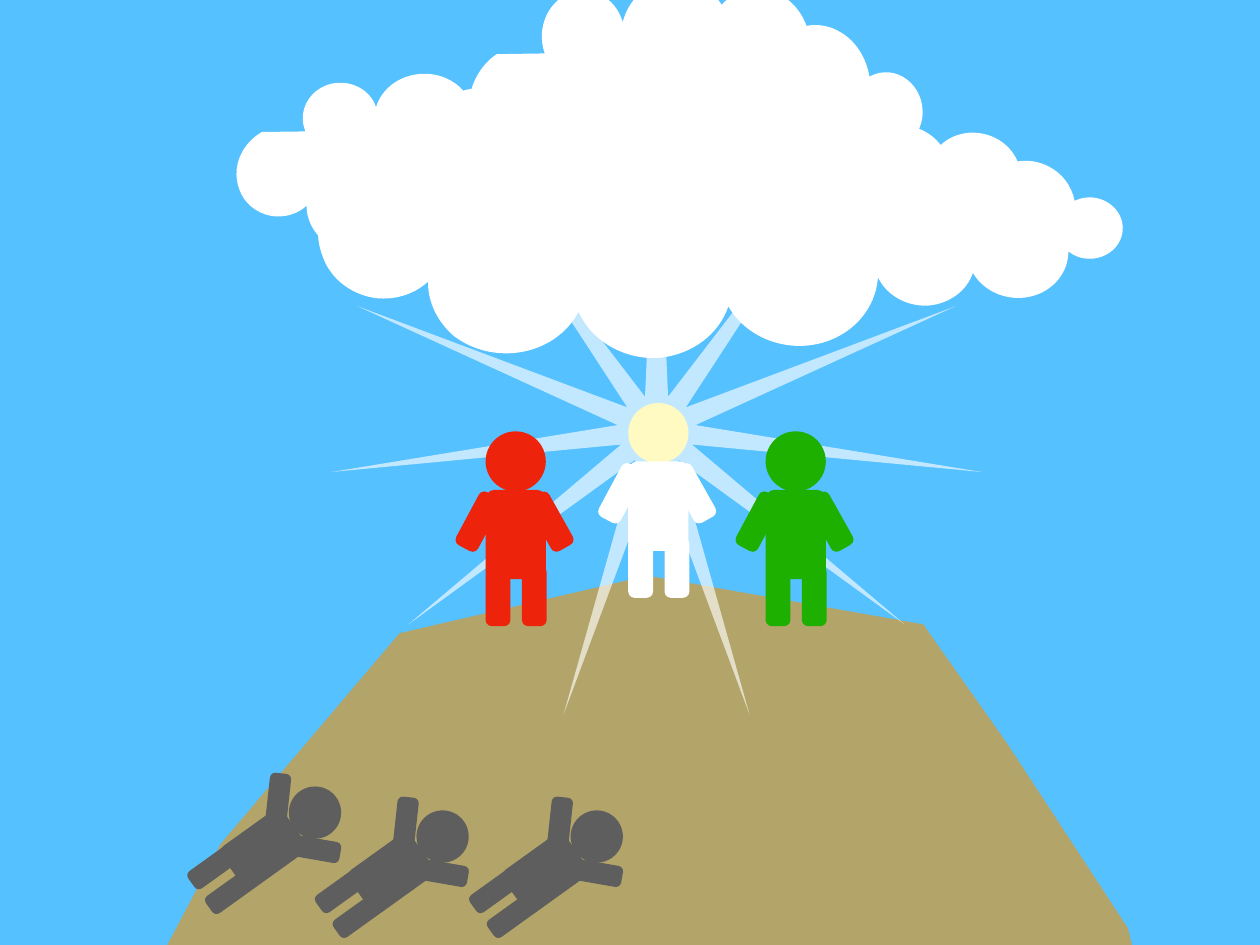
from lxml import etree
from pptx import Presentation
from pptx.dml.color import RGBColor
from pptx.enum.shapes import MSO_SHAPE as Shape
from pptx.oxml.ns import qn
from pptx.util import Inches

SKY = RGBColor(0x56, 0xC1, 0xFF)
EARTH = RGBColor(0xB3, 0xA4, 0x69)
YELLOW = RGBColor(0xFF, 0xF0, 0x56)
WHITE = RGBColor(0xFF, 0xFF, 0xFF)
RED = RGBColor(0xEE, 0x23, 0x0C)
GREEN = RGBColor(0x1E, 0xB0, 0x01)
GRAY = RGBColor(0x5E, 0x5E, 0x5E)

WIDE, HIGH = 14.22, 10.67
HILL = [(-0.27, 15.63), (0.95, 12.45), (2.49, 9.53), (4.51, 7.15), (7.31, 6.5),
        (10.42, 7.05), (11.37, 8.4), (12.73, 10.48), (13.38, 13.15),
        (14.03, 14.22), (15.09, 16.58)]

# Figure parts: left and top from the head's corner, width, height, turn, corner
STAND = [(0, 0, 0.68, 0.68, 0, None), (0, 0.66, 0.68, 1.01, 0, 0.15),
         (0, 1.52, 0.28, 0.68, 0, 0.249), (0.41, 1.52, 0.28, 0.68, 0, 0.249),
         (-0.22, 0.68, 0.28, 0.68, 28.2, 0.249),
         (0.59, 0.68, 0.28, 0.68, 330.8, 0.249)]
FALL = [(0, 0, 0.59, 0.59, 54.3, None), (-0.58, 0.28, 0.59, 0.86, 54.3, 0.15),
        (-0.98, 0.62, 0.24, 0.59, 54.3, 0.249),
        (-0.78, 0.9, 0.24, 0.59, 54.3, 0.249),
        (-0.24, -0.15, 0.24, 0.59, 186.2, 0.249),
        (0.17, 0.41, 0.24, 0.59, 279.9, 0.249)]
SAINT = (7.09, 4.55)
GUESTS = [(5.48, 4.87, RED), (8.64, 4.87, GREEN)]
FALLEN = [(4.7, 9.15), (3.26, 8.88), (6.44, 9.15)]

# Right half of the rays: distance from the axis, then height on the slide
AXIS = 7.41
RAYS = [(0, 1.5), (0.13, 4.48), (2, 2.04), (0.33, 4.6), (3.37, 3.46),
        (0.44, 4.8), (3.67, 5.33), (0.4, 5.02), (2.8, 7.05), (0.24, 5.19),
        (1.05, 8.07), (0, 5.25)]

# Cloud outline: each row holds two control points and an end, or one straight end
CLOUD_BOX = (3.59, 0.83, 7.28, 3.21)
CLOUD_START = (3.64, 2.89)
CLOUD = [
    (3.72, 3.13, 3.94, 3.31, 4.2, 3.36), (4.43, 3.4, 4.67, 3.33, 4.83, 3.18),
    (4.83, 3.42, 4.94, 3.64, 5.13, 3.8), (5.59, 4.14, 6.27, 4.01, 6.53, 3.52),
    (6.68, 3.86, 7.06, 4.07, 7.45, 4.04), (7.81, 4, 8.11, 3.78, 8.22, 3.46),
    (8.44, 3.84, 8.94, 4.01, 9.37, 3.84), (9.7, 3.71, 9.91, 3.41, 9.91, 3.08),
    (10.27, 3.36, 10.81, 3.16, 10.87, 2.73), (10.92, 2.3, 10.44, 1.98, 10.02, 2.18),
    (9.97, 1.92, 9.8, 1.69, 9.56, 1.57), (9.39, 1.48, 9.2, 1.45, 9.01, 1.48),
    (8.87, 1.15, 8.53, 0.95, 8.15, 0.97), (7.96, 0.99, 7.78, 1.06, 7.65, 1.19),
    (7.46, 0.94, 7.15, 0.81, 6.83, 0.84), (6.47, 0.87, 6.16, 1.1, 6.06, 1.43),
    (5.96, 1.12, 5.62, 0.94, 5.28, 1.01), (4.88, 1.1, 4.66, 1.5, 4.81, 1.86),
    (4.04, 1.87),
    (3.9, 1.95, 3.79, 2.06, 3.71, 2.19), (3.58, 2.4, 3.55, 2.66, 3.64, 2.89)]
CLOUDS = [CLOUD_BOX, (2.67, 0.83, 4.64, 2.04), (8.03, 1.41, 4.64, 2.04),
          (5.29, -0.24, 5.12, 2.63)]


def paint(shape, color):
    shape.shadow.inherit = False
    shape.fill.solid()
    shape.fill.fore_color.rgb = color
    shape.line.fill.background()
    return shape


def add_free(shapes, points, color):
    spots = [(Inches(x), Inches(y)) for x, y in points]
    pen = shapes.build_freeform(*spots[0])
    pen.add_line_segments(spots[1:])
    return paint(pen.convert_to_shape(), color)


def add_figure(parent, left, top, parts, color, head=None):
    group = parent.add_group_shape()
    for x, y, wide, high, turn, corner in parts:
        kind = Shape.OVAL if corner is None else Shape.ROUNDED_RECTANGLE
        part = group.shapes.add_shape(kind, Inches(left + x), Inches(top + y),
                                      Inches(wide), Inches(high))
        part.rotation = turn
        if corner is not None:
            part.adjustments[0] = corner
        paint(part, head if head and corner is None else color)
    return group


def add_cloud(shapes, x, y, wide, high):
    """Fill the box with the cloud's curves, in hundredths of an inch."""
    box = [(x, y), (x + wide, y), (x + wide, y + high), (x, y + high)]
    cloud = add_free(shapes, box, WHITE)
    x0, y0, w0, h0 = CLOUD_BOX
    trace = next(cloud._element.iter(qn("a:path")))
    trace.clear()
    trace.set("w", str(round(w0 * 100)))
    trace.set("h", str(round(h0 * 100)))
    names = {2: "a:lnTo", 6: "a:cubicBezTo"}
    moves = [("a:moveTo", CLOUD_START)] + [(names[len(row)], row) for row in CLOUD]
    for name, row in moves:
        move = etree.SubElement(trace, qn(name))
        for px, py in zip(row[::2], row[1::2]):
            spot = etree.SubElement(move, qn("a:pt"))
            spot.set("x", str(round((px - x0) * 100)))
            spot.set("y", str(round((py - y0) * 100)))
    etree.SubElement(trace, qn("a:close"))


def main():
    deck = Presentation()
    deck.slide_width, deck.slide_height = Inches(WIDE), Inches(HIGH)
    shapes = deck.slides.add_slide(deck.slide_layouts[6]).shapes

    # Sky and hill
    sky = shapes.add_shape(Shape.RECTANGLE, 0, Inches(-0.03),
                           Inches(WIDE), Inches(10.72))
    paint(sky, SKY)
    add_free(shapes, HILL, EARTH)

    # Shining figure with its rays, then the two beside it
    saint = add_figure(shapes, *SAINT, STAND, WHITE, YELLOW)
    right = [(AXIS + x, y) for x, y in RAYS]
    left = [(AXIS - x, y) for x, y in RAYS[-2:0:-1]]
    rays = add_free(saint.shapes, right + left, WHITE)
    tint = next(rays._element.iter(qn("a:srgbClr")))
    etree.SubElement(tint, qn("a:alpha")).set("val", "64000")
    for x, y, color in GUESTS:
        add_figure(shapes, x, y, STAND, color)

    # Clouds: one outline fitted to each box
    bank = shapes.add_group_shape()
    for box in CLOUDS:
        add_cloud(bank.shapes, *box)

    # Fallen figures
    for x, y in FALLEN:
        add_figure(shapes, x, y, FALL, GRAY)

    deck.save("out.pptx")


if __name__ == "__main__":
    main()
